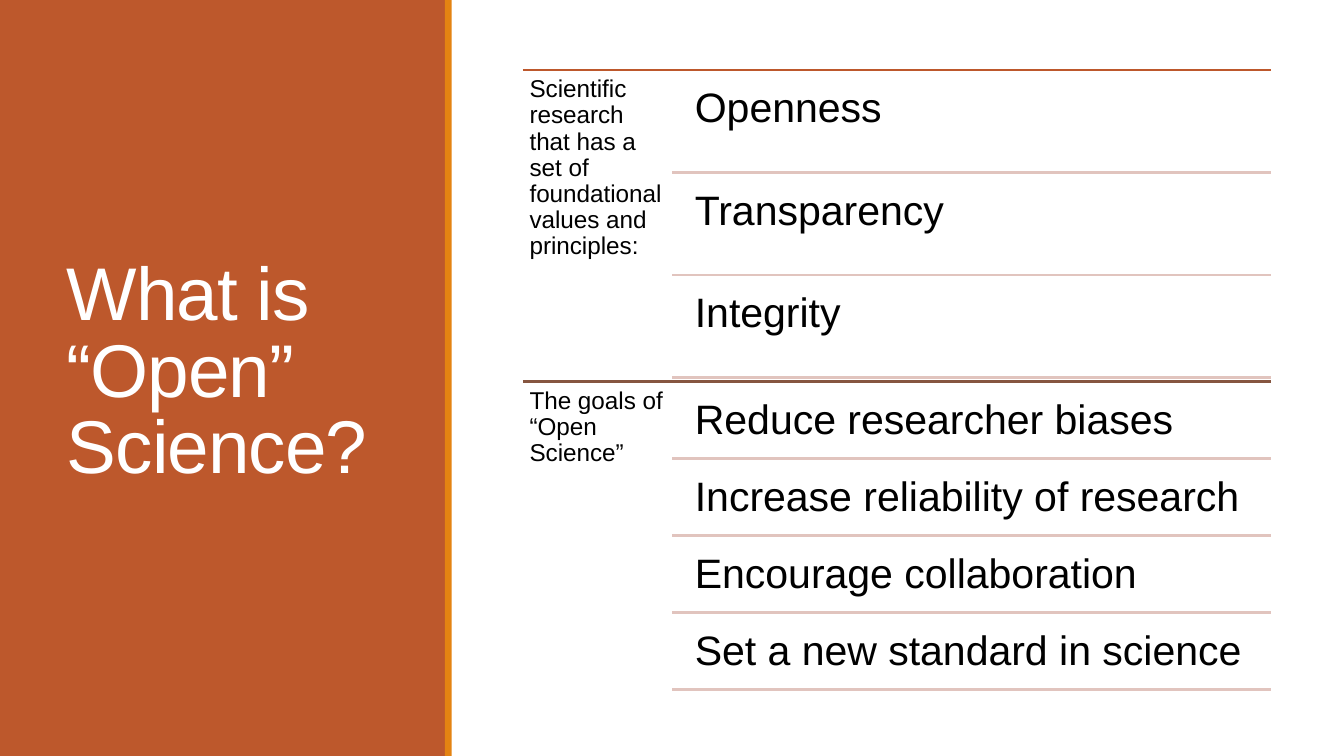
from lxml.etree import SubElement
from pptx import Presentation
from pptx.dml.color import RGBColor
from pptx.enum.shapes import MSO_CONNECTOR, MSO_SHAPE
from pptx.enum.text import MSO_ANCHOR
from pptx.oxml.ns import qn
from pptx.util import Inches, Pt

TITLE = "What is “Open” Science?"
RUST = RGBColor(0xBD, 0x58, 0x2C)
ORANGE = RGBColor(0xE4, 0x83, 0x12)
BROWN = RGBColor(0x86, 0x56, 0x40)
PINK = RGBColor(0xE1, 0xC4, 0xBE)
WHITE = RGBColor(0xFF, 0xFF, 0xFF)
BLACK = RGBColor(0, 0, 0)

PARTS = [
    ("Scientific research that has a set of foundational values and principles:",
     RUST, ["Openness", "Transparency", "Integrity"]),
    ("The goals of “Open Science”", BROWN,
     ["Reduce researcher biases", "Increase reliability of research",
      "Encourage collaboration", "Set a new standard in science"]),
]

WIDTH = 10
HEIGHT = WIDTH * 9 / 16
PANEL, STRIPE = 3.32, 0.05
LEFT, SPLIT, RIGHT = 3.89, 5, 9.46
TOP, BLOCK, ROWS = 0.52, 2.32, 2.29
GAP, INDENT = 0.04, 0.08

deck = Presentation()
deck.slide_width, deck.slide_height = Inches(WIDTH), Inches(HEIGHT)
slide = deck.slides.add_slide(deck.slide_layouts[6])
shapes = slide.shapes


def add_bar(left, width, color):
    bar = shapes.add_shape(MSO_SHAPE.RECTANGLE, Inches(left), 0,
                           Inches(width), Inches(HEIGHT))
    bar.shadow.inherit = False
    bar.fill.solid()
    bar.fill.fore_color.rgb = color
    bar.line.fill.background()


def add_rule(left, y, color):
    rule = shapes.add_connector(MSO_CONNECTOR.STRAIGHT, Inches(left), Inches(y),
                                Inches(RIGHT), Inches(y))
    rule.line.color.rgb = color
    rule.line.width = Pt(1.25)
    SubElement(rule._element.spPr, qn("a:effectLst"))


def add_text(text, left, top, width, height, size, color=BLACK, inset=0.05,
             spacing=0.9, anchor=MSO_ANCHOR.TOP):
    box = shapes.add_textbox(*map(Inches, (left, top, width, height)))
    frame = box.text_frame
    frame.word_wrap = True
    frame.vertical_anchor = anchor
    frame.margin_left = frame.margin_right = Inches(inset)
    frame.margin_top = frame.margin_bottom = Inches(inset)
    para = frame.paragraphs[0]
    para.line_spacing = spacing
    run = para.add_run()
    run.text = text
    run.font.name = "Arial"
    run.font.size = Pt(size)
    run.font.color.rgb = color
    return run


add_bar(0, PANEL, RUST)
title = add_text(TITLE, 0.4, 0.42, 2.53, 4.73, 40, WHITE, inset=0.1,
                 spacing=0.85, anchor=MSO_ANCHOR.MIDDLE)
title.font._element.set("spc", "-50")
add_bar(PANEL - 0.01, STRIPE, ORANGE)

for index, (label, color, items) in enumerate(PARTS):
    top = TOP + index * BLOCK
    pitch = ROWS / len(items)
    add_rule(LEFT, top, color)
    add_text(label, LEFT, top, SPLIT - LEFT, BLOCK, 13)
    for row, item in enumerate(items):
        start = top + row * pitch
        add_text(item, SPLIT + INDENT, start + GAP, RIGHT - SPLIT - INDENT,
                 pitch - GAP, 22, inset=0.09)
        add_rule(SPLIT, start + pitch, PINK)

deck.save("out.pptx")
